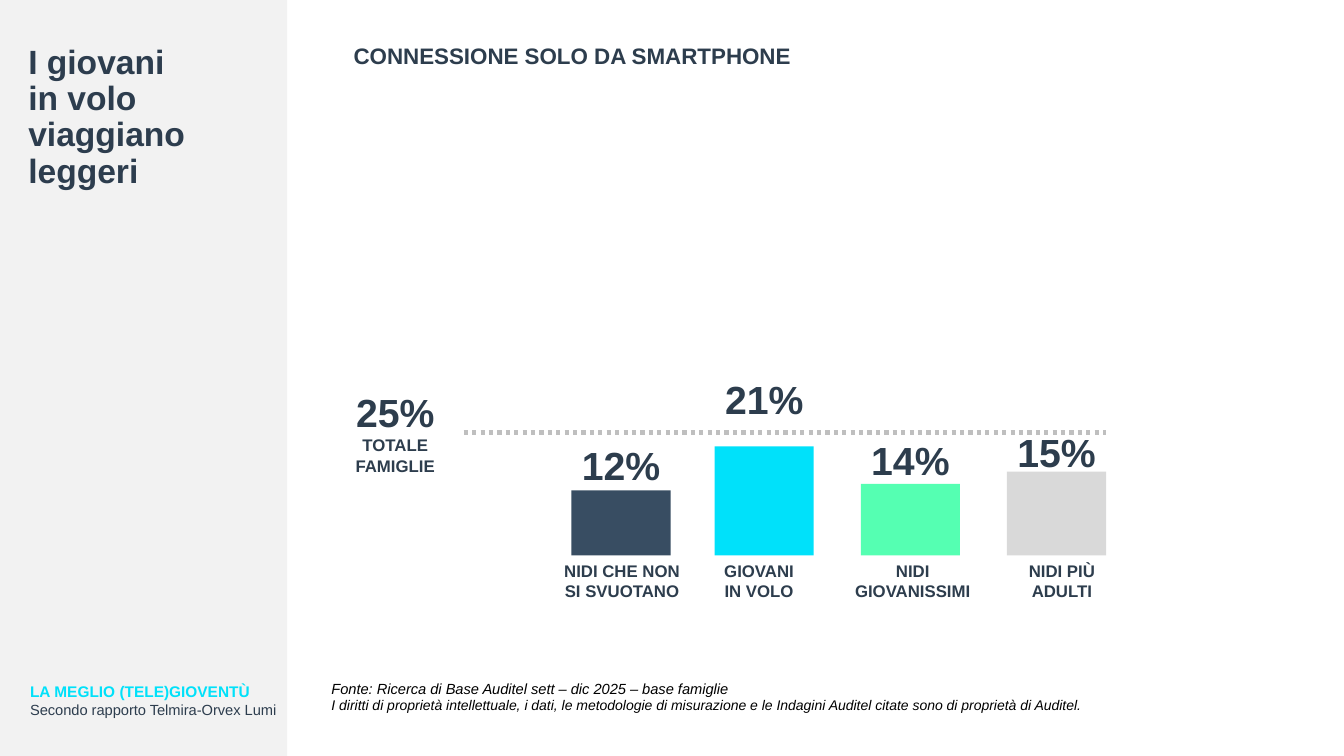
from dataclasses import dataclass

import pptx
import pptx.dml.color
import pptx.enum.dml
import pptx.enum.shapes
import pptx.enum.text
import pptx.oxml.ns
import pptx.util
from lxml import etree

Pt = pptx.util.Pt
ALIGN = pptx.enum.text.PP_ALIGN

COLORS = {
    "panel": "F2F2F2",
    "title": "2D3D4E",
    "text": "2D3D4D",
    "black": "000000",
    "navy": "384D62",
    "cyan": "00E1FA",
    "green": "55FFB2",
    "grey": "D9D9D9",
    "average": "BFBFBF",
}
FONT = "Arial"
BASELINE = 396.7
BAR_WIDTH = 70.8
VALUE_WIDTH = 56.9
VALUE_HEIGHT = 33.8


@dataclass
class Line:
    text: str
    size: float
    color: str = "text"
    bold: bool = True
    italic: bool = False


@dataclass
class TextBox:
    left: float
    top: float
    width: float
    height: float
    lines: list[Line]
    align: ALIGN = ALIGN.LEFT
    inset: bool = True
    wrap: bool = True


@dataclass
class Bar:
    left: float
    height: float
    color: str
    value: str
    value_top: float
    label: str
    label_left: float
    label_width: float


BARS = [
    Bar(408.2, 46.4, "navy", "12%", 315.4, "NIDI CHE NON SI SVUOTANO", 394.6, 99.4),
    Bar(510.5, 77.8, "cyan", "21%", 267.8, "GIOVANI IN VOLO", 506.9, 70.6),
    Bar(614.9, 51.1, "green", "14%", 311.8, "NIDI GIOVANISSIMI", 598.3, 107.3),
    Bar(719.3, 59.8, "grey", "15%", 306, "NIDI PIÙ ADULTI", 715.7, 85.7),
]

TEXTS = [
    TextBox(14.4, 483.8, 416.2, 33.1, [
        Line("LA MEGLIO (TELE)GIOVENTÙ", 11, "cyan"),
        Line("Secondo rapporto Telmira-Orvex Lumi", 10.5, "title", bold=False),
    ]),
    TextBox(229.7, 481.7, 568.8, 44.6, [
        Line("Fonte: Ricerca di Base Auditel sett – dic 2025 – base famiglie",
             10.5, "black", bold=False, italic=True),
        Line("I diritti di proprietà intellettuale, i dati, le metodologie di misurazione "
             "e le Indagini Auditel citate sono di proprietà di Auditel.",
             10, "black", bold=False, italic=True),
    ]),
    TextBox(245.5, 26.6, 366.5, 46.1, [Line("CONNESSIONE SOLO DA SMARTPHONE", 16)]),
    TextBox(236.2, 277.2, 92.2, 63.4, [Line("25%", 28), Line("TOTALE FAMIGLIE", 12)],
            ALIGN.CENTER, inset=False),
]


def rgb(name: str) -> pptx.dml.color.RGBColor:
    return pptx.dml.color.RGBColor.from_string(COLORS[name])


def add_run(p, line: Line) -> None:
    r = p.add_run()
    r.text = line.text
    r.font.name = FONT
    r.font.size = Pt(line.size)
    r.font.bold = line.bold
    r.font.italic = line.italic
    r.font.color.rgb = rgb(line.color)


def add_text(s, box: TextBox) -> None:
    sp = s.shapes.add_textbox(Pt(box.left), Pt(box.top), Pt(box.width), Pt(box.height))
    tf = sp.text_frame
    tf.word_wrap = box.wrap
    if not box.inset:
        tf.margin_left = tf.margin_top = tf.margin_right = tf.margin_bottom = 0
    for i, line in enumerate(box.lines):
        p = tf.add_paragraph() if i else tf.paragraphs[0]
        p.alignment = box.align
        add_run(p, line)


def add_rect(s, left: float, top: float, width: float, height: float, color: str):
    sp = s.shapes.add_shape(pptx.enum.shapes.MSO_SHAPE.RECTANGLE,
                            Pt(left), Pt(top), Pt(width), Pt(height))
    sp.shadow.inherit = False
    sp.fill.solid()
    sp.fill.fore_color.rgb = rgb(color)
    sp.line.fill.background()
    return sp


def add_bar(s, bar: Bar) -> None:
    add_rect(s, bar.left, BASELINE - bar.height, BAR_WIDTH, bar.height, bar.color)
    value_left = bar.left + (BAR_WIDTH - VALUE_WIDTH) / 2
    add_text(s, TextBox(value_left, bar.value_top, VALUE_WIDTH, VALUE_HEIGHT,
                        [Line(bar.value, 28)], ALIGN.CENTER, inset=False, wrap=False))
    add_text(s, TextBox(bar.label_left, BASELINE, bar.label_width, 36,
                        [Line(bar.label, 12)], ALIGN.CENTER))


def format_title(s) -> None:
    sp = s.shapes.title
    sp.left, sp.top, sp.width, sp.height = Pt(13), Pt(28.8), Pt(187.2), Pt(241.2)
    tf = sp.text_frame
    tf.word_wrap = True
    tf.auto_size = pptx.enum.text.MSO_AUTO_SIZE.NONE
    tf.vertical_anchor = pptx.enum.text.MSO_ANCHOR.TOP
    p = tf.paragraphs[0]
    p.alignment = ALIGN.LEFT
    p.line_spacing = 0.9
    add_run(p, Line("I giovani", 24, "title"))
    p.add_line_break()
    add_run(p, Line("in volo viaggiano leggeri", 24, "title"))


def add_average_line(s) -> None:
    line = s.shapes.add_connector(pptx.enum.shapes.MSO_CONNECTOR.STRAIGHT,
                                  Pt(331.2), Pt(308.9), Pt(789.8), Pt(308.9))
    line.line.color.rgb = rgb("average")
    line.line.width = Pt(3)
    line.line.dash_style = pptx.enum.dml.MSO_LINE.ROUND_DOT
    etree.SubElement(line.element.spPr, pptx.oxml.ns.qn("a:effectLst"))


def main() -> None:
    prs = pptx.Presentation()
    prs.slide_width, prs.slide_height = Pt(960), Pt(540)
    s = prs.slides.add_slide(prs.slide_layouts[5])
    panel = add_rect(s, 0, 0, 205.2, 540, "panel")
    s.shapes.title.element.addprevious(panel.element)
    format_title(s)
    for bar in BARS:
        add_bar(s, bar)
    for box in TEXTS:
        add_text(s, box)
    add_average_line(s)
    prs.save("out.pptx")


if __name__ == "__main__":
    main()
